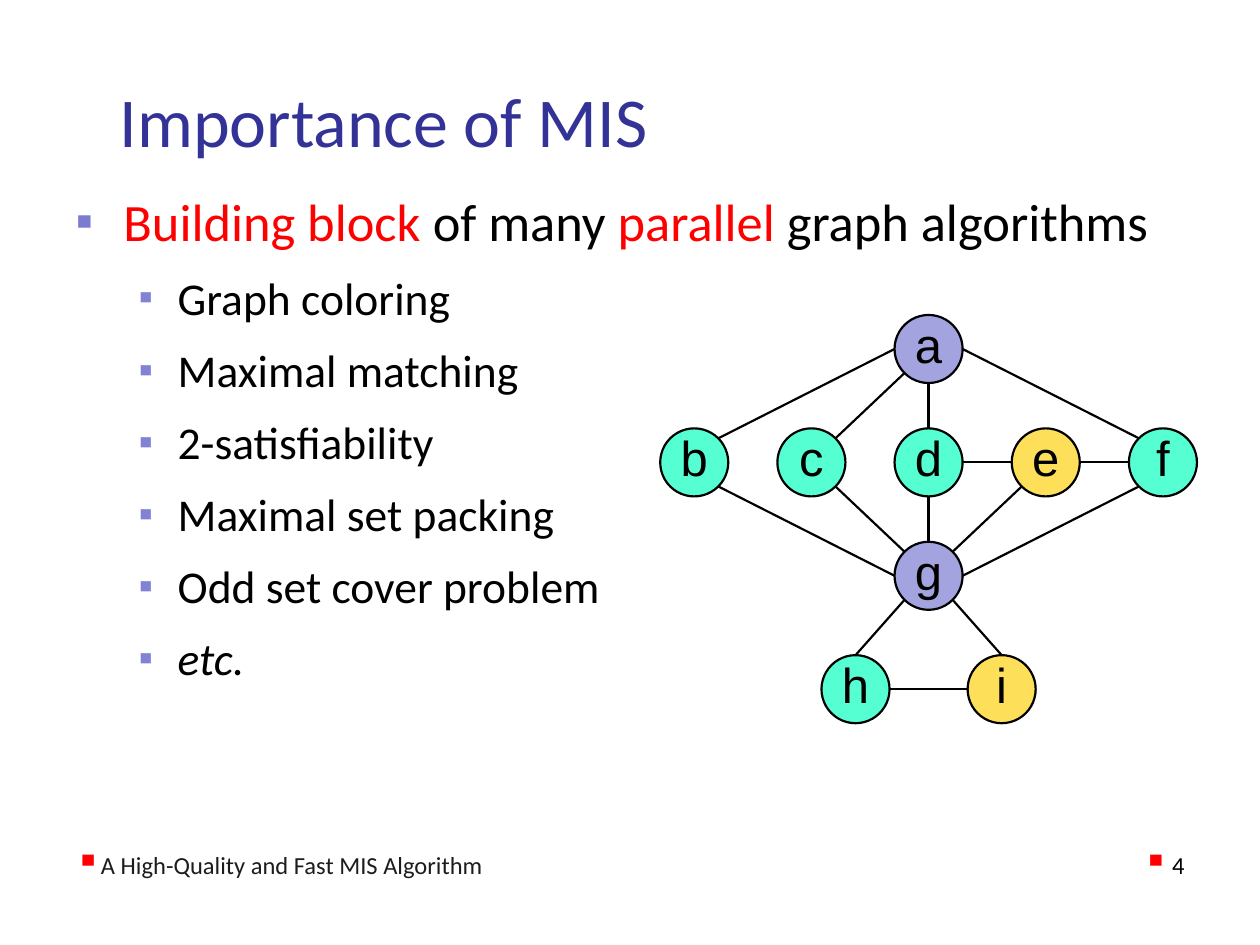
from math import sqrt

from lxml.etree import SubElement
from pptx import Presentation
from pptx.dml.color import RGBColor
from pptx.enum.shapes import MSO_CONNECTOR, MSO_SHAPE
from pptx.enum.text import MSO_ANCHOR, MSO_AUTO_SIZE, PP_ALIGN
from pptx.oxml.ns import qn
from pptx.util import Inches, Pt

COLORS = {
    "title": "333397", "black": "000000", "red": "FF0000", "footer": "1C1C1C",
    "bullet": "7B7BD1", "sub_bullet": "8282D4",
    "green": "56FFD2", "violet": "A3A3E0", "yellow": "FEDF59",
}

RADIUS = 0.27
CENTER_X, TOP_Y = 7.37, 2.77
COLUMN_GAP, ROW_GAP, LEAF_OFFSET = 0.93, 0.9, 0.58
DIAGONAL = 1 / sqrt(2)
COMPASS = {
    "N": (0, -1), "S": (0, 1), "W": (-1, 0), "E": (1, 0),
    "NW": (-DIAGONAL, -DIAGONAL), "NE": (DIAGONAL, -DIAGONAL),
    "SW": (-DIAGONAL, DIAGONAL), "SE": (DIAGONAL, DIAGONAL),
}
VERTICES = {
    "a": (0, 0, "violet"),
    "b": (-2 * COLUMN_GAP, 1, "green"),
    "c": (-COLUMN_GAP, 1, "green"),
    "d": (0, 1, "green"),
    "e": (COLUMN_GAP, 1, "yellow"),
    "f": (2 * COLUMN_GAP, 1, "green"),
    "g": (0, 2, "violet"),
    "h": (-LEAF_OFFSET, 3, "green"),
    "i": (LEAF_OFFSET, 3, "yellow"),
}
EDGES = [
    ("a", "W", "b", "NE"), ("a", "SW", "c", "NE"), ("a", "S", "d", "N"),
    ("a", "E", "f", "NW"), ("d", "E", "e", "W"), ("e", "E", "f", "W"),
    ("b", "SE", "g", "W"), ("c", "SE", "g", "NW"), ("d", "S", "g", "N"),
    ("e", "SW", "g", "NE"), ("f", "SW", "g", "E"),
    ("g", "SW", "h", "N"), ("g", "SE", "i", "N"), ("h", "E", "i", "W"),
]
HEADLINE = [("Building block ", "red"), ("of many ", "black"),
            ("parallel", "red"), (" graph algorithms", "black")]
APPLICATIONS = ["Graph coloring", "Maximal matching", "2-satisfiability",
                "Maximal set packing", "Odd set cover problem", "etc."]


def rgb(name):
    """Look up a named colour."""
    return RGBColor.from_string(COLORS[name])


def place(shape, left, top, width, height):
    """Move and size a shape in inches."""
    shape.left, shape.top = Inches(left), Inches(top)
    shape.width, shape.height = Inches(width), Inches(height)


def add_run(paragraph, text, size, color, font="Calibri", italic=None):
    """Append one formatted run."""
    run = paragraph.add_run()
    run.text = text
    run.font.size, run.font.name, run.font.italic = Pt(size), font, italic
    run.font.color.rgb = rgb(color)


def set_bullet(paragraph, color, percent, margin=0.0, hanging=0.0):
    """Give a paragraph a coloured square bullet."""
    properties = paragraph._p.get_or_add_pPr()
    properties.set("marL", str(Inches(margin)))
    properties.set("indent", str(-Inches(hanging)))
    bullet_color = SubElement(properties, qn("a:buClr"))
    SubElement(bullet_color, qn("a:srgbClr"), val=COLORS[color])
    SubElement(properties, qn("a:buSzPct"), val=str(percent * 1000))
    SubElement(properties, qn("a:buChar"), char="▪")


def fill_title(title):
    """Write the slide title."""
    place(title, 0.5, 0.6, 9, 0.7)
    frame = title.text_frame
    frame.auto_size = MSO_AUTO_SIZE.NONE
    frame.vertical_anchor = MSO_ANCHOR.MIDDLE
    frame.margin_left = Inches(0.45)
    heading = frame.paragraphs[0]
    heading.alignment = PP_ALIGN.LEFT
    add_run(heading, "Importance of MIS", 40, "title")


def fill_body(body):
    """Write the headline and the list of applications."""
    place(body, 0.5, 1.45, 9, 4.9)
    frame = body.text_frame
    frame.auto_size = MSO_AUTO_SIZE.NONE
    headline = frame.paragraphs[0]
    set_bullet(headline, "bullet", 95, 0.38, 0.38)
    headline.space_before = Pt(0)
    for text, color in HEADLINE:
        add_run(headline, text, 30, color)
    for application in APPLICATIONS:
        item = frame.add_paragraph()
        item.level = 1
        set_bullet(item, "sub_bullet", 90, 0.81, 0.31)
        item.space_before = Pt(10)
        add_run(item, application, 26, "black", italic=application == "etc.")


def add_footer(slide, text, left, width, color, alignment, hanging=0.0):
    """Add a bulleted text at the foot of the slide."""
    footer = slide.shapes.add_textbox(
        Inches(left), Inches(6.53), Inches(width), Inches(0.5))
    frame = footer.text_frame
    frame.word_wrap = True
    frame.vertical_anchor = MSO_ANCHOR.BOTTOM
    line = frame.paragraphs[0]
    set_bullet(line, "red", 140, hanging, hanging)
    line.alignment = alignment
    add_run(line, text, 14, color)


def vertex_center(name):
    """Return the centre of a vertex in inches."""
    offset, row, _ = VERTICES[name]
    return CENTER_X + offset, TOP_Y + row * ROW_GAP


def rim_point(name, direction):
    """Return the point on a vertex rim in a compass direction."""
    x, y = vertex_center(name)
    dx, dy = COMPASS[direction]
    return Inches(x + RADIUS * dx), Inches(y + RADIUS * dy)


def add_edge(graph, start, start_side, end, end_side):
    """Draw an edge between two vertex rims."""
    edge = graph.shapes.add_connector(
        MSO_CONNECTOR.STRAIGHT,
        *rim_point(start, start_side), *rim_point(end, end_side))
    edge.line.color.rgb = rgb("black")
    edge.line.width = Pt(1.25)
    SubElement(edge._element.spPr, qn("a:effectLst"))


def add_vertex(graph, name):
    """Draw a labelled circle."""
    x, y = vertex_center(name)
    vertex = graph.shapes.add_shape(
        MSO_SHAPE.OVAL, Inches(x - RADIUS), Inches(y - RADIUS),
        Inches(2 * RADIUS), Inches(2 * RADIUS))
    vertex.shadow.inherit = False
    vertex.fill.solid()
    vertex.fill.fore_color.rgb = rgb(VERTICES[name][2])
    vertex.line.color.rgb = rgb("black")
    vertex.line.width = Pt(1.25)
    frame = vertex.text_frame
    frame.margin_left = frame.margin_right = 0
    frame.margin_top = frame.margin_bottom = 0
    frame.vertical_anchor = MSO_ANCHOR.BOTTOM
    label = frame.paragraphs[0]
    label.alignment = PP_ALIGN.CENTER
    add_run(label, name, 28, "black", "Arial")


def main():
    """Build and save the slide."""
    deck = Presentation()
    deck.slide_width, deck.slide_height = Inches(10), Inches(7.5)
    slide = deck.slides.add_slide(deck.slide_layouts[1])
    fill_title(slide.shapes.title)
    fill_body(slide.placeholders[1])
    add_footer(slide, "A High-Quality and Fast MIS Algorithm",
               0.5, 6.92, "footer", PP_ALIGN.LEFT)
    add_footer(slide, "4", 7.42, 2.08, "black", PP_ALIGN.RIGHT, 0.23)
    graph = slide.shapes.add_group_shape()
    for edge in EDGES:
        add_edge(graph, *edge)
    for name in VERTICES:
        add_vertex(graph, name)
    deck.save("out.pptx")


if __name__ == "__main__":
    main()
